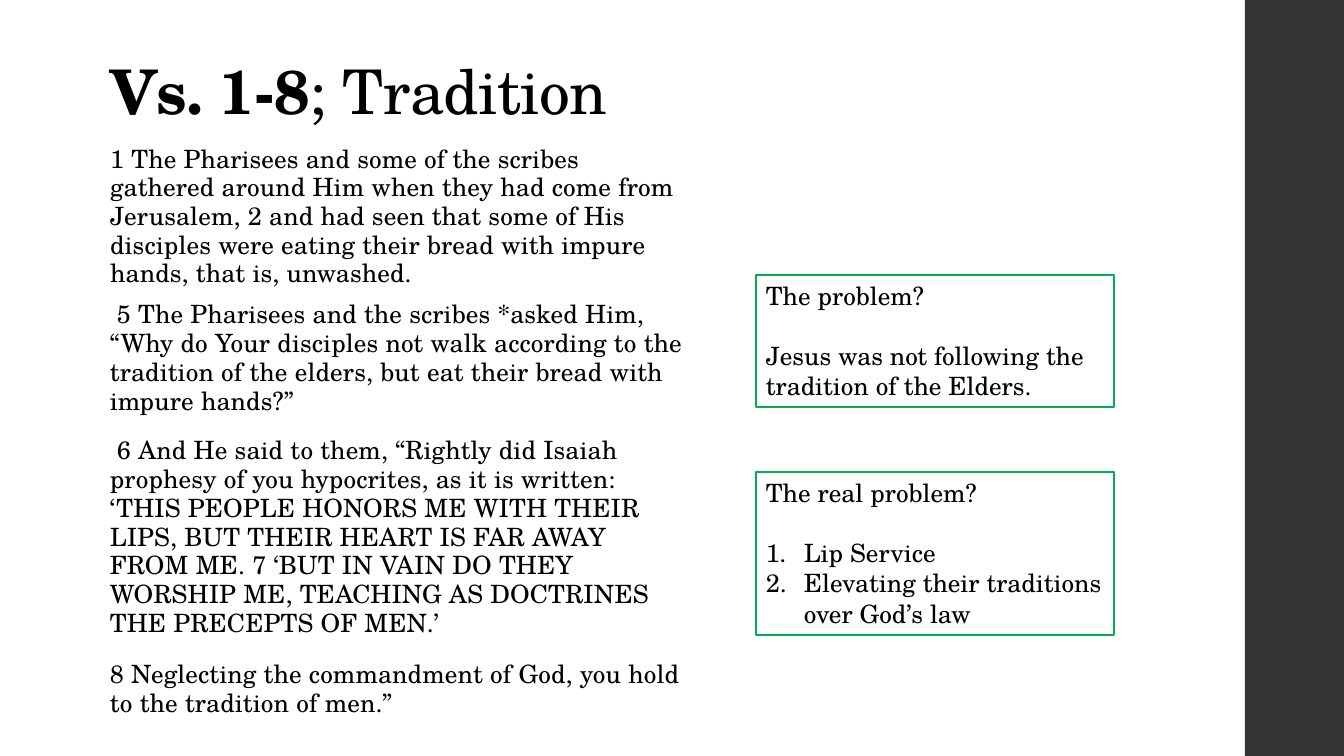
from dataclasses import dataclass
from lxml.etree import SubElement
from pptx import Presentation
from pptx.dml.color import RGBColor as Rgb
from pptx.enum.shapes import MSO_SHAPE as Shape
from pptx.enum.text import MSO_ANCHOR as Anchor, MSO_AUTO_SIZE as Fit, PP_ALIGN as Align
from pptx.oxml.ns import qn
from pptx.util import Pt

SCALE = 914400 / 100.8


def px(size):
    return round(size * SCALE)


@dataclass(frozen=True)
class Theme:
    font: str = "TeX Gyre Schola"
    ink: Rgb = Rgb(0, 0, 0)
    edge: Rgb = Rgb(0x00, 0xB0, 0x50)
    bar: Rgb = Rgb(0x35, 0x35, 0x37)
    head: int = 44
    body: int = 18
    gap: float = 21.6


class Deck:
    def __init__(self, theme):
        self.theme = theme
        self.file = Presentation()
        self.file.slide_width, self.file.slide_height = px(1344), px(756)
        self.slide = self.file.slides.add_slide(self.file.slide_layouts[1])
        self.shapes = self.slide.shapes

    def place(self, shape, area):
        shape.left, shape.top, shape.width, shape.height = map(px, area)

    def style(self, par, size, track=0):
        for run in par.runs:
            run.font.name = self.theme.font
            run.font.size = Pt(size)
            run.font.color.rgb = self.theme.ink
            if track:
                run.font._element.set("spc", str(track))

    def indent(self, par, left, first, mark="buNone"):
        props = par._p.get_or_add_pPr()
        props.set("marL", str(px(left)))
        props.set("indent", str(px(first)))
        item = SubElement(props, qn(f"a:{mark}"))
        if mark == "buAutoNum":
            item.set("type", "arabicPeriod")

    def fill(self, frame, lines):
        frame.word_wrap = True
        frame.text = "\n".join(lines)
        return frame.paragraphs

    def rect(self, area):
        shape = self.shapes.add_shape(Shape.RECTANGLE, *map(px, area))
        shape.shadow.inherit = False
        return shape

    def stripe(self, area):
        shape = self.rect(area)
        shape.fill.solid()
        shape.fill.fore_color.rgb = self.theme.bar
        shape.line.fill.background()

    def title(self, area, bold, plain):
        shape = self.shapes.title
        self.place(shape, area)
        frame = shape.text_frame
        frame.vertical_anchor = Anchor.BOTTOM
        frame.auto_size = Fit.NONE
        par = self.fill(frame, [bold])[0]
        par.runs[0].font.bold = True
        par.add_run().text = plain
        par.alignment = Align.LEFT
        par.line_spacing = 0.9
        self.style(par, self.theme.head, -50)

    def verse(self, frame, lines, first=0):
        frame.auto_size = Fit.NONE
        for spot, par in enumerate(self.fill(frame, lines)):
            self.indent(par, 0, 0 if spot else first)
            par.line_spacing = 0.95
            par.space_before = Pt(14 if spot else 0)
            par.space_after = Pt(2)
            self.style(par, self.theme.body, 10)

    def body(self, area, lines):
        shape = self.slide.placeholders[1]
        self.place(shape, area)
        self.verse(shape.text_frame, lines)

    def text(self, area, lines):
        box = self.shapes.add_textbox(*map(px, area))
        self.verse(box.text_frame, lines, first=7)

    def card(self, area, lines, count=False):
        shape = self.rect(area)
        shape.fill.background()
        shape.line.color.rgb = self.theme.edge
        shape.line.width = Pt(1)
        frame = shape.text_frame
        frame.vertical_anchor = Anchor.TOP
        for spot, par in enumerate(self.fill(frame, lines)):
            if count and spot:
                self.indent(par, 38, -38, "buAutoNum")
            par.alignment = Align.LEFT
            if spot == 1:
                par.space_before = Pt(self.theme.gap)
            self.style(par, self.theme.body)


def main():
    deck = Deck(Theme())
    deck.stripe((1245, 0, 99, 756))
    deck.title((100, 31, 1068, 102), "Vs. 1-8", "; Tradition")
    deck.body((100, 140, 594, 167), [
        "1 The Pharisees and some of the scribes gathered around Him when they "
        "had come from Jerusalem, 2 and had seen that some of His disciples were "
        "eating their bread with impure hands, that is, unwashed."])
    deck.card((756, 275, 358, 132), [
        "The problem?",
        "Jesus was not following the tradition of the Elders."])
    deck.text((100, 296, 594, 126), [
        "5 The Pharisees and the scribes *asked Him, “Why do Your disciples not "
        "walk according to the tradition of the elders, but eat their bread with "
        "impure hands?”"])
    deck.text((100, 432, 594, 126), [
        "6 And He said to them, “Rightly did Isaiah prophesy of you hypocrites, "
        "as it is written: ‘THIS PEOPLE HONORS ME WITH THEIR LIPS, BUT THEIR "
        "HEART IS FAR AWAY FROM ME. 7 ‘BUT IN VAIN DO THEY WORSHIP ME, TEACHING "
        "AS DOCTRINES THE PRECEPTS OF MEN.’",
        "8 Neglecting the commandment of God, you hold to the tradition of men.”"])
    deck.card((756, 472, 358, 163), [
        "The real problem?",
        "Lip Service",
        "Elevating their traditions over God’s law"], count=True)
    deck.file.save("out.pptx")


if __name__ == "__main__":
    main()
